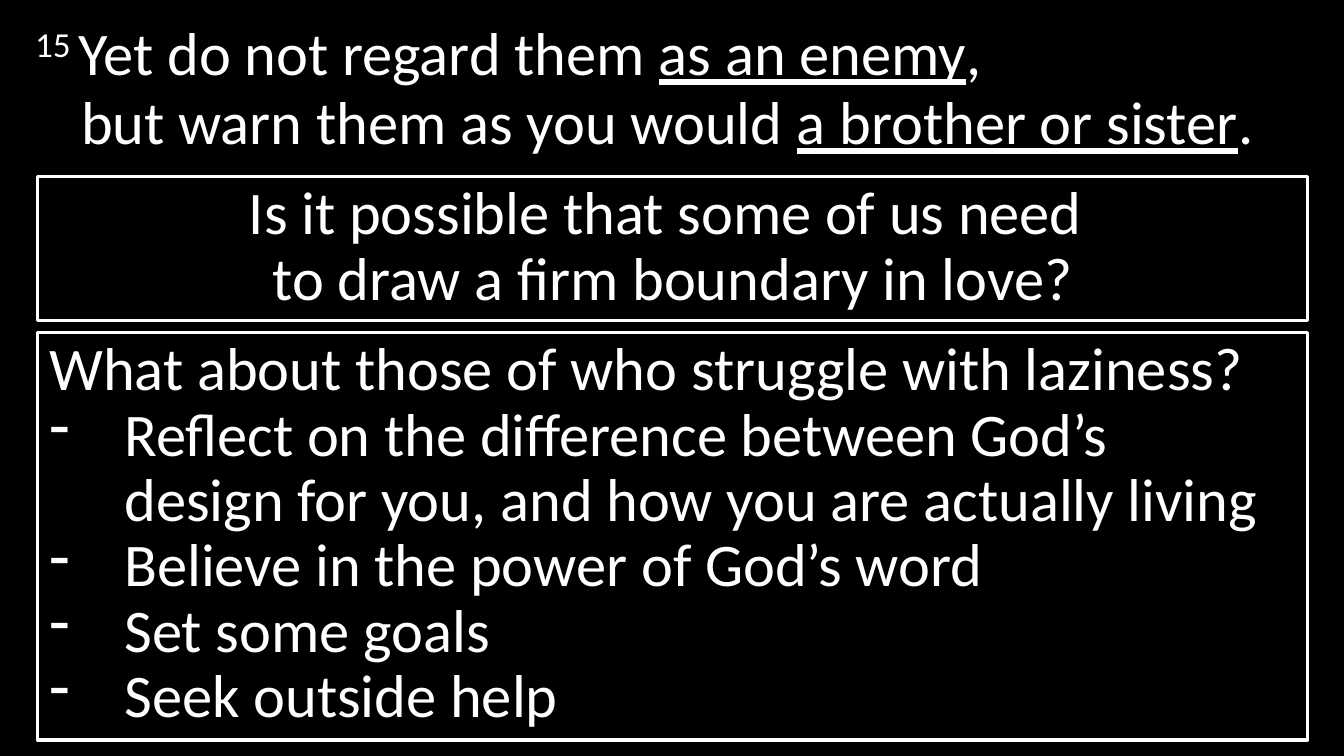
from lxml.etree import SubElement
from pptx import Presentation
from pptx.dml.color import RGBColor
from pptx.enum.shapes import MSO_SHAPE
from pptx.enum.text import MSO_ANCHOR, MSO_AUTO_SIZE, PP_ALIGN
from pptx.oxml.ns import qn
from pptx.util import Inches, Pt

BLACK = RGBColor(0, 0, 0)
WHITE = RGBColor(255, 255, 255)
FONT, SIZE = "Calibri", 36

VERSE = [
    [("15\u00a0", "super"), ("Yet do not regard them ", ""), ("as an enemy", "under"), (",", "")],
    [("but warn them as you would ", ""), ("a brother or sister", "under"), (".", "")],
]
ASK = ["Is it possible that some of us need \nto draw a firm boundary in love?"]
STEPS = [
    "What about those of who struggle with laziness?",
    "Reflect on the difference between God’s \ndesign for you, and how you are actually living",
    "Believe in the power of God’s word",
    "Set some goals",
    "Seek outside help",
]
LEFT, WIDTH = 0.31, 10.5


def style(para, align, lead, hang):
    """Format a paragraph with its runs and line breaks."""
    para.alignment = align
    para.line_spacing = lead
    para.space_before = Pt(0)
    props = para._p.get_or_add_pPr()
    props.set("marL", str(Inches(hang)))
    props.set("indent", str(-Inches(hang)))
    for run in para.runs:
        run.font.name = FONT
        run.font.size = Pt(SIZE)
        run.font.color.rgb = WHITE
    for gap in para._p.findall(qn("a:br")):
        SubElement(gap, qn("a:rPr"), sz=str(SIZE * 100))


def add_verse(slide):
    """Put the verse in the title placeholder."""
    title = slide.shapes.title
    title.left, title.top = Inches(0.19), Inches(0.12)
    title.width, title.height = Inches(10.74), Inches(1.3)
    frame = title.text_frame
    frame.word_wrap = True
    frame.auto_size = MSO_AUTO_SIZE.NONE
    frame.vertical_anchor = MSO_ANCHOR.TOP
    para = frame.paragraphs[0]
    for row, line in enumerate(VERSE):
        if row:
            para.add_line_break()
        for text, look in line:
            run = para.add_run()
            run.text = text
            if look == "under":
                run.font.underline = True
            if look == "super":
                run.font._element.set("baseline", "30000")
    style(para, PP_ALIGN.LEFT, 0.95, 0.38)


def add_box(slide, top, height, lines, align):
    """Draw a framed box whose lines after the first are dashed items."""
    box = slide.shapes.add_shape(
        MSO_SHAPE.RECTANGLE, Inches(LEFT), Inches(top), Inches(WIDTH), Inches(height))
    box.shadow.inherit = False
    box.fill.solid()
    box.fill.fore_color.rgb = BLACK
    box.line.color.rgb = WHITE
    box.line.width = Pt(2)
    frame = box.text_frame
    frame.word_wrap = True
    frame.vertical_anchor = MSO_ANCHOR.TOP
    for row, line in enumerate(lines):
        para = frame.add_paragraph() if row else frame.paragraphs[0]
        para.text = line
        style(para, align, 0.9, 0.62 if row else 0)
        if row:
            SubElement(para._p.get_or_add_pPr(), qn("a:buChar"), char="-")


def main():
    """Build and save the slide."""
    deck = Presentation()
    deck.slide_width, deck.slide_height = Inches(11.11), Inches(6.25)
    slide = deck.slides.add_slide(deck.slide_layouts[5])
    slide.background.fill.solid()
    slide.background.fill.fore_color.rgb = BLACK
    add_verse(slide)
    add_box(slide, 1.46, 1.19, ASK, PP_ALIGN.CENTER)
    add_box(slide, 2.75, 3.37, STEPS, PP_ALIGN.LEFT)
    deck.save("out.pptx")


if __name__ == "__main__":
    main()
